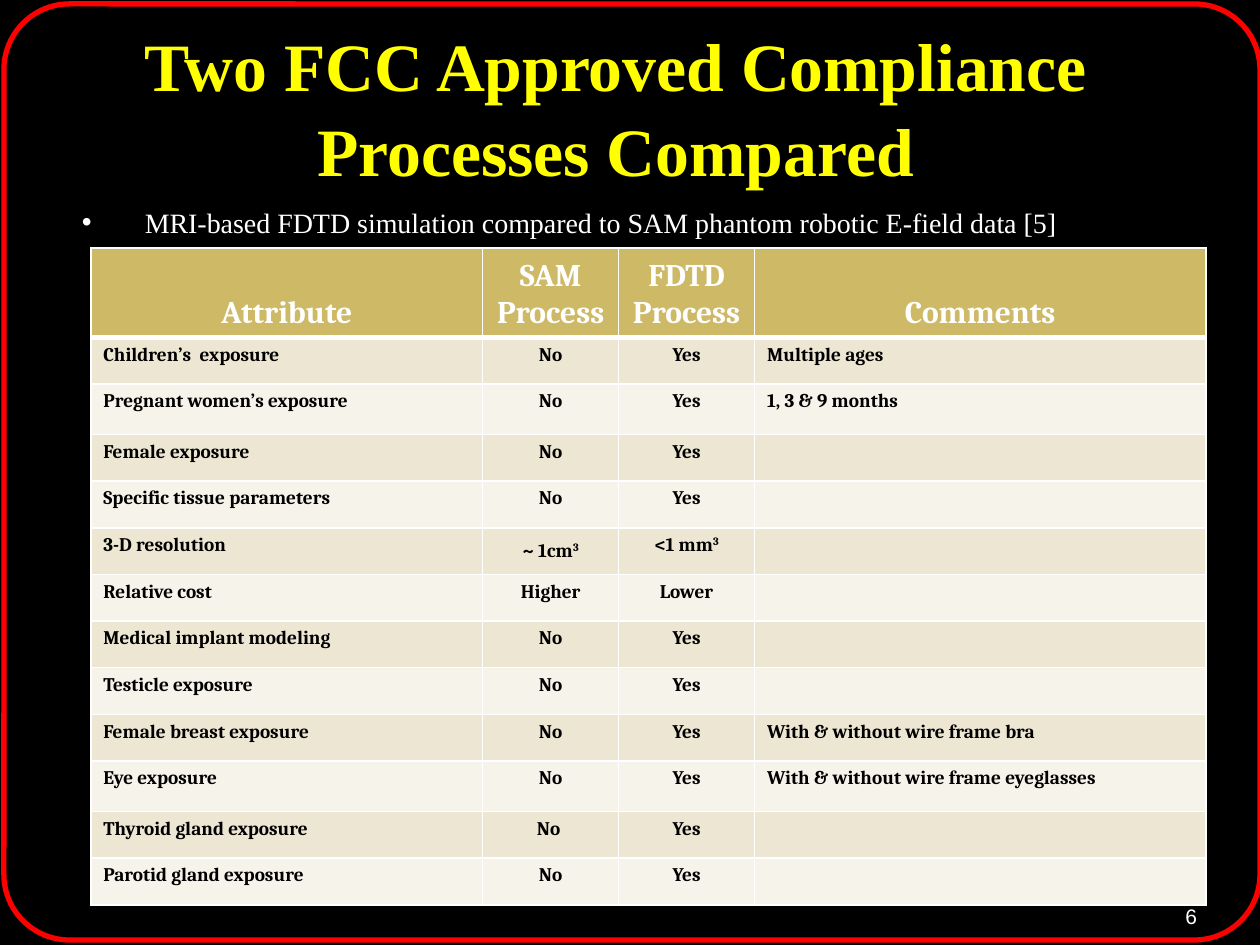
"""Build the slide that compares two compliance processes in a table."""
import pptx
import pptx.dml.color
import pptx.enum.shapes
import pptx.enum.text
import pptx.oxml
import pptx.oxml.ns
import pptx.util

Cm = pptx.util.Cm
Pt = pptx.util.Pt
Align = pptx.enum.text.PP_ALIGN
Anchor = pptx.enum.text.MSO_ANCHOR

HEADERS = ["Attribute", "SAM Process", "FDTD Process", "Comments"]
ROWS = [
    ["Children’s  exposure", "No", "Yes", "Multiple ages"],
    ["Pregnant women’s exposure", "No", "Yes", "1, 3 & 9 months"],
    ["Female exposure", "No", "Yes", ""],
    ["Specific tissue parameters", "No", "Yes", ""],
    ["3-D resolution", "~ 1cm^3", "<1 mm^3", ""],
    ["Relative cost", "Higher", "Lower", ""],
    ["Medical implant modeling", "No", "Yes", ""],
    ["Testicle exposure", "No", "Yes", ""],
    ["Female breast exposure", "No", "Yes", "With & without wire frame bra"],
    ["Eye exposure", "No", "Yes", "With & without wire frame eyeglasses"],
    ["Thyroid gland exposure", "No ", "Yes", ""],
    ["Parotid gland exposure", "No", "Yes", ""],
]
COLUMN_WIDTHS = [7.9, 2.74, 2.74, 9.1]
HEADER_HEIGHT, ROW_HEIGHT, TALL_ROW_HEIGHT = 1.8, 0.94, 1.02
TALL_ROWS = {2, 10}


def color(hex_string):
    return pptx.dml.color.RGBColor.from_string(hex_string)


def add_xml(parent, tag, **attributes):
    element = pptx.oxml.parse_xml(f"<a:{tag} {pptx.oxml.ns.nsdecls('a')}/>")
    for name, value in attributes.items():
        element.set(name, str(value))
    parent.append(element)
    return element


class SlideBuilder:
    white, black, yellow, red = "FFFFFF", "000000", "FFFF00", "FF0000"
    header_fill, band_fills = "CEB966", ["EDE6D3", "F6F3EA"]
    serif, sans, table_font = "Times New Roman", "Arial", "Cambria"

    def __init__(self, presentation):
        self.slide = presentation.slides.add_slide(presentation.slide_layouts[6])
        background = self.slide.background.fill
        background.solid()
        background.fore_color.rgb = color(self.black)

    def run(self, paragraph, text, size, font, hex_string, bold=False):
        run = paragraph.add_run()
        run.text = text
        run.font.size = Pt(size)
        run.font.name = font
        run.font.bold = bold
        run.font.color.rgb = color(hex_string)
        return run

    def text(self, box, content, size, font, hex_string, bold=False,
             align=Align.LEFT, anchor=Anchor.TOP, side_inset=0.25, space_before=0):
        shape = self.slide.shapes.add_textbox(*map(Cm, box))
        frame = shape.text_frame
        frame.word_wrap = True
        frame.vertical_anchor = anchor
        frame.margin_left = frame.margin_right = Cm(side_inset)
        paragraph = frame.paragraphs[0]
        paragraph.alignment = align
        paragraph.space_before = Pt(space_before)
        self.run(paragraph, content, size, font, hex_string, bold)
        return paragraph

    def bullet(self, box, content, size):
        paragraph = self.text(box, content, size, self.serif, self.white, space_before=10.8)
        properties = paragraph._p.get_or_add_pPr()
        properties.set("marL", str(Cm(1.27)))
        properties.set("indent", str(-Cm(1.27)))
        add_xml(properties, "buFont", typeface=self.sans)
        add_xml(properties, "buChar", char="•")

    def frame(self, box, radius, width):
        shape = self.slide.shapes.add_shape(
            pptx.enum.shapes.MSO_SHAPE.ROUNDED_RECTANGLE, *map(Cm, box))
        shape.adjustments[0] = radius
        shape.shadow.inherit = False
        shape.fill.background()
        shape.line.color.rgb = color(self.red)
        shape.line.width = Pt(width)

    def borders(self, cell, top, bottom):
        properties = cell._tc.get_or_add_tcPr()
        for side, width in zip("LRTB", [1, 1, top, bottom]):
            line = add_xml(properties, f"ln{side}", w=Pt(width))
            add_xml(add_xml(line, "solidFill"), "srgbClr", val=self.white)

    def cell(self, cell, text, row, column):
        header = row == 0
        self.borders(cell, top=3 if row == 1 else 1, bottom=3 if header else 1)
        cell.fill.solid()
        cell.fill.fore_color.rgb = color(
            self.header_fill if header else self.band_fills[(row - 1) % 2])
        cell.vertical_anchor = Anchor.BOTTOM if header else Anchor.TOP
        size, text_color = (18, self.white) if header else (11, self.black)
        paragraph = cell.text_frame.paragraphs[0]
        paragraph.alignment = Align.CENTER if header or column in (1, 2) else Align.LEFT
        base, _, exponent = text.partition("^")
        if base:
            self.run(paragraph, base, size, self.table_font, text_color, True)
        else:
            add_xml(paragraph._p, "endParaRPr", sz=size * 100)
        if exponent:
            power = self.run(paragraph, exponent, size, self.table_font, text_color, True)
            power._r.get_or_add_rPr().set("baseline", "30000")

    def table(self, left, top, rows, widths, heights):
        table = self.slide.shapes.add_table(
            len(rows), len(widths), Cm(left), Cm(top),
            Cm(sum(widths)), Cm(sum(heights))).table
        for column, width in zip(table.columns, widths):
            column.width = Cm(width)
        for row, height in zip(table.rows, heights):
            row.height = Cm(height)
        for row, values in enumerate(rows):
            for column, text in enumerate(values):
                self.cell(table.cell(row, column), text, row, column)
        return table


def main():
    presentation = pptx.Presentation()
    presentation.slide_width, presentation.slide_height = Cm(25.4), Cm(19.05)
    builder = SlideBuilder(presentation)
    builder.text([22.02, 17.83, 2.11, 1.02], "6", 12, builder.sans, builder.white,
                 align=Align.RIGHT, anchor=Anchor.BOTTOM, side_inset=0)
    title = builder.text([1.4, 1.07, 22.02, 2.11],
                         "Two FCC Approved Compliance Processes Compared",
                         38.7, builder.serif, builder.yellow, bold=True,
                         align=Align.CENTER, anchor=Anchor.MIDDLE, space_before=10.8)
    title.line_spacing = 1.04
    builder.bullet([1.4, 4.01, 22.81, 0.94],
                   "MRI-based FDTD simulation compared to SAM phantom robotic E-field data [5]",
                   16)
    builder.frame([0.08, 0.08, 25.32, 18.87], radius=0.07, width=3)
    heights = [HEADER_HEIGHT] + [
        TALL_ROW_HEIGHT if row in TALL_ROWS else ROW_HEIGHT
        for row in range(1, len(ROWS) + 1)]
    table = builder.table(1.83, 5, [HEADERS] + ROWS, COLUMN_WIDTHS, heights)
    table.cell(5, 1).vertical_anchor = Anchor.MIDDLE
    presentation.save("out.pptx")


if __name__ == "__main__":
    main()
